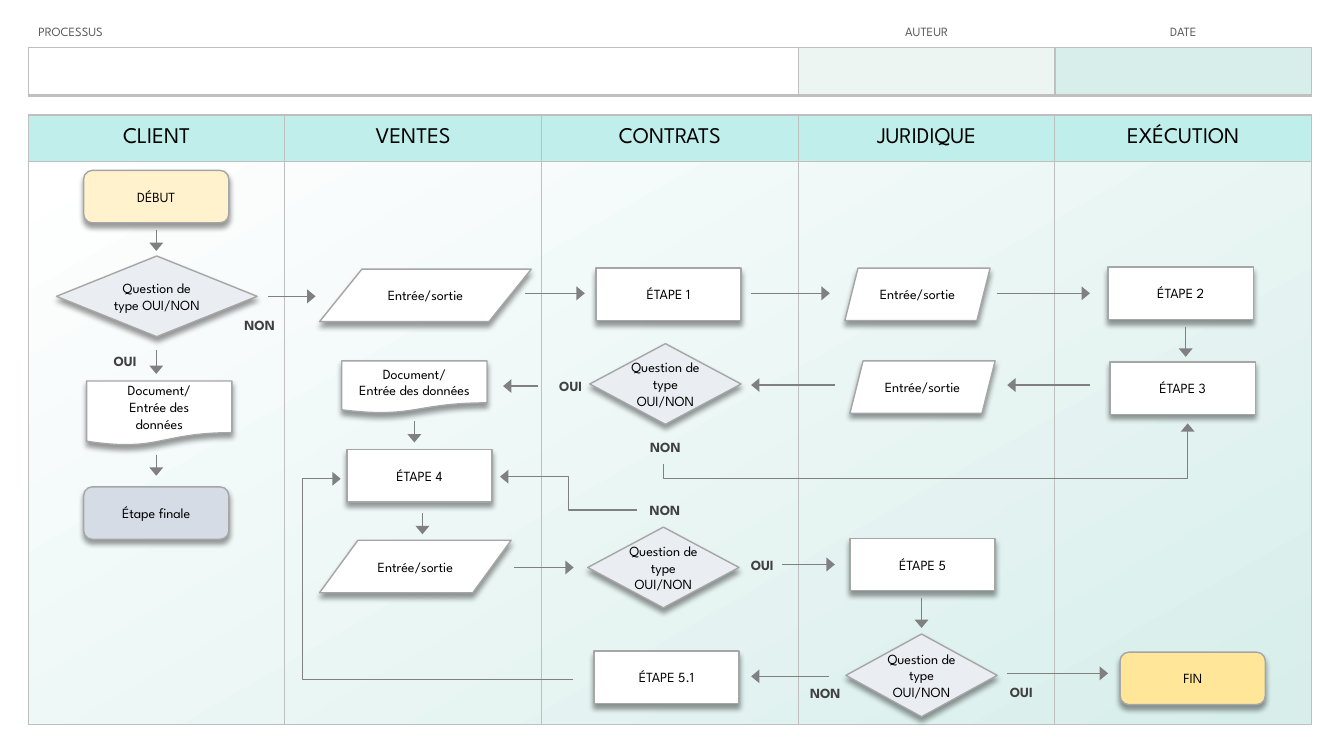
"""Build a cross-functional flowchart slide with five swimlanes."""
from lxml.etree import SubElement
from pptx import Presentation
from pptx.dml.color import RGBColor
from pptx.enum.shapes import MSO_CONNECTOR, MSO_SHAPE
from pptx.enum.text import MSO_ANCHOR, PP_ALIGN
from pptx.oxml.ns import qn
from pptx.util import Pt

PX = 9144
FONT = "League Spartan"
WHITE = RGBColor(0xFF, 0xFF, 0xFF)
BLACK = RGBColor(0x00, 0x00, 0x00)
DARK = RGBColor(0x40, 0x40, 0x40)
LABEL = RGBColor(0x59, 0x59, 0x59)
ARROW = RGBColor(0x80, 0x80, 0x80)
OUTLINE = RGBColor(0xA6, 0xA6, 0xA6)
BORDER = RGBColor(0xBF, 0xBF, 0xBF)
HEADER = RGBColor(0xBF, 0xEE, 0xEB)
MINT = RGBColor(0xD7, 0xEE, 0xEB)
PALE_MINT = RGBColor(0xED, 0xF5, 0xF3)
CREAM = RGBColor(0xFF, 0xF2, 0xCC)
GOLD = RGBColor(0xFF, 0xE6, 0x99)
SLATE = RGBColor(0xD6, 0xDC, 0xE5)
MIST = RGBColor(0xEA, 0xEE, 0xF3)

STEP = MSO_SHAPE.FLOWCHART_PROCESS
TERMINAL = MSO_SHAPE.FLOWCHART_ALTERNATE_PROCESS
DATA = MSO_SHAPE.FLOWCHART_DATA
SLANTED = MSO_SHAPE.PARALLELOGRAM
DOCUMENT = MSO_SHAPE.FLOWCHART_DOCUMENT
DECISION = MSO_SHAPE.FLOWCHART_DECISION
ROUNDED = MSO_SHAPE.ROUNDED_RECTANGLE

LEFT, WIDTH, LANES = 28, 1273, 5
NO_STYLE = "{2D5ABB26-0587-4C30-8999-92F81FD0307C}"
QUESTION = "Question de type\nOUI/NON"
IO = "Entrée/sortie"

NODES = [
    (STEP, 1101, 359, 144, 52, WHITE, "ÉTAPE 3"),
    (TERMINAL, 83, 169, 144, 52, CREAM, "DÉBUT"),
    (DATA, 317, 267, 210, 52, WHITE, IO),
    (DOCUMENT, 86, 378, 144, 64, WHITE, "Document/\nEntrée des\vdonnées"),
    (DECISION, 56, 254, 199, 80, MIST, "Question de type OUI/NON"),
    (TERMINAL, 83, 483, 144, 52, SLATE, "Étape finale"),
    (STEP, 591, 266, 144, 52, WHITE, "ÉTAPE 1"),
    (SLANTED, 838, 266, 144, 52, WHITE, IO),
    (STEP, 1099, 265, 144, 52, WHITE, "ÉTAPE 2"),
    (SLANTED, 843, 358, 144, 52, WHITE, IO),
    (DECISION, 585, 341, 150, 80, MIST, QUESTION),
    (DOCUMENT, 339, 358, 144, 52, WHITE, "Document/\nEntrée des données"),
    (STEP, 344, 446, 144, 52, WHITE, "ÉTAPE 4"),
    (DATA, 317, 536, 190, 52, WHITE, IO),
    (DECISION, 583, 523, 150, 80, MIST, QUESTION),
    (STEP, 843, 534, 144, 52, WHITE, "ÉTAPE 5"),
    (DECISION, 839, 629, 150, 82, MIST, QUESTION),
    (STEP, 589, 646, 144, 52, WHITE, "ÉTAPE 5.1"),
    (ROUNDED, 1111, 647, 144, 52, GOLD, "FIN"),
]
ANSWERS = [
    (95, 345, 58, 27, "OUI"), (230, 309, 55, 27, "NON"),
    (547, 374, 38, 17, "OUI"), (642, 435, 36, 17, "NON"),
    (727, 547, 58, 27, "OUI"), (632, 492, 55, 27, "NON"),
    (984, 676, 58, 21, "OUI"), (791, 677, 55, 21, "NON"),
]
ARROWS = [
    (266, 294, 313, 294), (155, 347, 155, 371), (155, 228, 155, 249),
    (411, 418, 411, 439), (155, 451, 155, 472), (521, 291, 580, 291),
    (745, 291, 823, 291), (989, 291, 1081, 291), (1176, 324, 1176, 354),
    (828, 382, 745, 382), (1081, 382, 999, 382), (534, 383, 499, 383),
    (419, 509, 419, 530), (776, 560, 828, 560), (914, 593, 914, 623),
    (822, 671, 745, 671), (999, 668, 1099, 668), (510, 563, 569, 563),
]


class Flowchart:
    """Hold the text style and the slide, and draw each kind of element."""

    def __init__(self, slide, font):
        self.slide, self.font = slide, font

    def text(self, tf, text, size, color, bold=False, align=PP_ALIGN.CENTER):
        tf.text = text
        for p in tf.paragraphs:
            p.alignment = align
            for r in p.runs:
                r.font.name, r.font.size = self.font, Pt(size)
                r.font.bold, r.font.color.rgb = bold, color

    def frame(self, tf):
        tf.word_wrap = True
        tf.vertical_anchor = MSO_ANCHOR.MIDDLE
        tf.margin_left = tf.margin_right = tf.margin_top = tf.margin_bottom = 2 * PX

    def shape(self, kind, x, y, w, h):
        sp = self.slide.shapes.add_shape(kind, x * PX, y * PX, w * PX, h * PX)
        sp.shadow.inherit = False
        return sp

    def backdrop(self, x, y, w, h):
        sp = self.shape(MSO_SHAPE.RECTANGLE, x, y, w, h)
        sp.line.fill.background()
        sp.fill.gradient()
        sp.fill.gradient_angle = 300
        for stop, position, color in zip(sp.fill.gradient_stops, (0, 1), (WHITE, MINT)):
            stop.position, stop.color.rgb = position, color

    def node(self, kind, x, y, w, h, color, text):
        sp = self.shape(kind, x, y, w, h)
        sp.fill.solid()
        sp.fill.fore_color.rgb = color
        sp.line.color.rgb, sp.line.width = OUTLINE, Pt(1)
        effects = sp._element.spPr.find(qn("a:effectLst"))
        shadow = SubElement(effects, qn("a:outerShdw"), blurRad=str(Pt(4)),
                            dist=str(Pt(3)), dir="5400000", rotWithShape="0")
        black = SubElement(shadow, qn("a:srgbClr"), val=str(BLACK))
        SubElement(black, qn("a:alpha"), val="40000")
        self.frame(sp.text_frame)
        self.text(sp.text_frame, text, 10, BLACK)

    def answer(self, x, y, w, h, text):
        box = self.slide.shapes.add_textbox(x * PX, y * PX, w * PX, h * PX)
        self.frame(box.text_frame)
        self.text(box.text_frame, text, 10, DARK, bold=True)

    def arrow(self, x1, y1, x2, y2, kind=MSO_CONNECTOR.STRAIGHT):
        ends = [round(v * PX) for v in (x1, y1, x2, y2)]
        cxn = self.slide.shapes.add_connector(kind, *ends)
        cxn.line.color.rgb, cxn.line.width = ARROW, Pt(1)
        spPr = cxn._element.spPr
        SubElement(spPr.find(qn("a:ln")), qn("a:tailEnd"), type="triangle", w="lg", len="med")
        SubElement(spPr, qn("a:effectLst"))
        return spPr

    def elbow(self, x1, y1, x2, y2, bend):
        spPr = self.arrow(x1, y1, x2, y2, MSO_CONNECTOR.ELBOW)
        self.bend(spPr, (bend - x1) / (x2 - x1))

    def elbow_up(self, x1, y1, x2, y2, bend):
        cx, cy, rise, run = (x1 + x2) / 2, (y1 + y2) / 2, (y1 - y2) / 2, (x2 - x1) / 2
        spPr = self.arrow(cx - rise, cy - run, cx + rise, cy + run, MSO_CONNECTOR.ELBOW)
        spPr.find(qn("a:xfrm")).set("rot", "16200000")
        self.bend(spPr, (bend - y1) / (y2 - y1))

    def bend(self, spPr, ratio):
        geom = spPr.find(qn("a:prstGeom"))
        guides = geom.find(qn("a:avLst"))
        if guides is None:
            guides = SubElement(geom, qn("a:avLst"))
        SubElement(guides, qn("a:gd"), name="adj1", fmla=f"val {round(ratio * 100000)}")

    def table(self, y, heights, lanes):
        shape = self.slide.shapes.add_table(len(heights), len(lanes), LEFT * PX, y * PX,
                                            WIDTH * PX, sum(heights) * PX)
        table = shape.table
        table.first_row = table.horz_banding = False
        shape._element.find(".//" + qn("a:tableStyleId")).text = NO_STYLE
        for col, share in zip(table.columns, lanes):
            col.width = WIDTH * PX * share // LANES
        for row, height in zip(table.rows, heights):
            row.height = height * PX
        return table

    def cell(self, cell, fill=None, borders=None):
        tcPr = cell._tc.get_or_add_tcPr()
        for side, width in (borders or {}).items():
            ln = SubElement(tcPr, qn("a:ln" + side), w=str(Pt(width)))
            SubElement(SubElement(ln, qn("a:solidFill")), qn("a:srgbClr"), val=str(BORDER))
        if fill is None:
            cell.fill.background()
        else:
            cell.fill.solid()
            cell.fill.fore_color.rgb = fill

    def heading(self, cell, text, size, color, align=PP_ALIGN.CENTER, indent=1):
        cell.vertical_anchor = MSO_ANCHOR.MIDDLE
        cell.margin_left, cell.margin_bottom = indent * PX, 0
        cell.margin_right = cell.margin_top = PX
        self.text(cell.text_frame, text, size, color, align=align)

    def swimlanes(self, y, heights, names):
        table = self.table(y, heights, [1] * LANES)
        grid = dict.fromkeys("LRTB", 1)
        for i, name in enumerate(names):
            self.cell(table.cell(0, i), HEADER, grid)
            self.heading(table.cell(0, i), name, 16, BLACK)
            self.cell(table.cell(1, i), None, grid)

    def title_block(self, y, heights, fields):
        table = self.table(y, heights, [share for _, share, *_ in fields])
        for i, (name, _, fill, align, indent) in enumerate(fields):
            self.cell(table.cell(0, i), None, {"B": 1})
            self.heading(table.cell(0, i), name, 9, LABEL, align, indent)
            self.cell(table.cell(1, i), fill, {"L": 1, "R": 1, "T": 1, "B": 2.25})


def main():
    prs = Presentation()
    prs.slide_width, prs.slide_height = 1333 * PX, 750 * PX
    s = prs.slides.add_slide(prs.slide_layouts[6])
    chart = Flowchart(s, FONT)
    chart.backdrop(LEFT, 160, WIDTH, 558)
    chart.swimlanes(114, (46, 559), ("CLIENT", "VENTES", "CONTRATS", "JURIDIQUE", "EXÉCUTION"))
    chart.title_block(19, (28, 48), [
        ("PROCESSUS", 3, WHITE, PP_ALIGN.LEFT, 10),
        ("AUTEUR", 1, PALE_MINT, PP_ALIGN.CENTER, 1),
        ("DATE", 1, MINT, PP_ALIGN.CENTER, 1),
    ])
    for node in NODES:
        chart.node(*node)
    for answer in ANSWERS:
        chart.answer(*answer)
    for arrow in ARROWS:
        chart.arrow(*arrow)
    chart.elbow_up(658, 460, 1178, 420, 475)
    chart.elbow(632, 506, 496, 473, 564)
    chart.elbow(568, 674, 338, 475, 300)
    prs.save("out.pptx")


if __name__ == "__main__":
    main()
